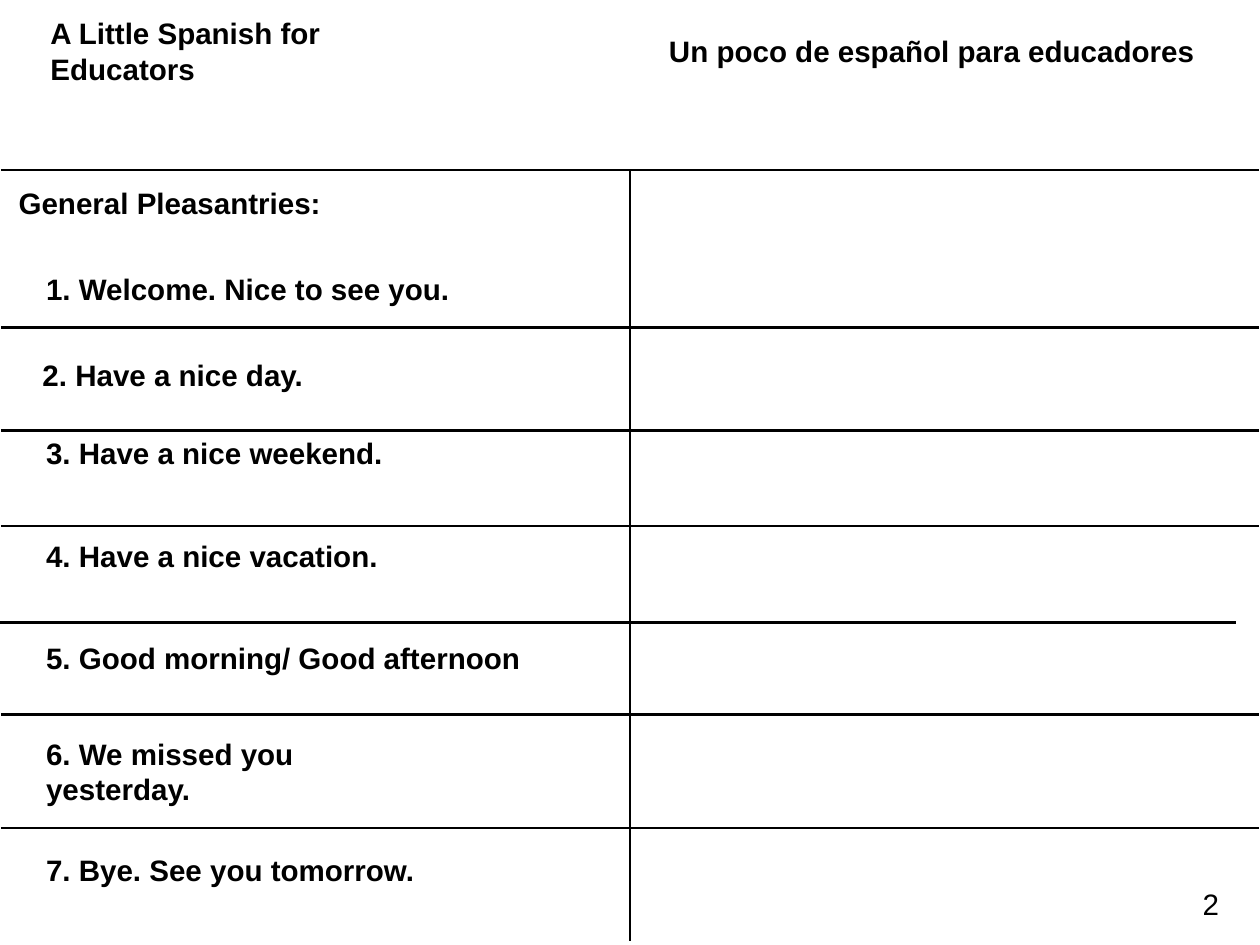
"""Build a two-column Spanish phrase sheet for educators."""
from dataclasses import dataclass

from lxml import etree
from pptx import Presentation
from pptx.dml.color import RGBColor
from pptx.enum.shapes import MSO_CONNECTOR
from pptx.enum.text import MSO_ANCHOR, MSO_AUTO_SIZE, PP_ALIGN
from pptx.oxml.ns import qn
from pptx.util import Inches, Pt

STRAIGHT = MSO_CONNECTOR.STRAIGHT
MIDDLE = MSO_ANCHOR.MIDDLE
FIXED_SIZE = MSO_AUTO_SIZE.NONE
LEFT, CENTER = PP_ALIGN.LEFT, PP_ALIGN.CENTER

TITLE = "A Little Spanish for Educators"
SUBTITLE = "Un poco de español para educadores"
SECTION = "General Pleasantries:"
PAGE_NUMBER = "2"

# Each row: top rule, phrase, phrase drop below the rule, phrase width, wraps.
ROWS = [
    (1.92, "1. Welcome. Nice to see you.", 1.09, 4.69, False),
    (3.70, "2. Have a nice day.", 0.28, 3.07, False),
    (4.86, "3. Have a nice weekend.", 0, 3.97, False),
    (5.94, "4. Have a nice vacation.", 0.08, 3.88, False),
    (7.03, "5. Good morning/ Good afternoon", 0.15, 5.5, False),
    (8.07, "6. We missed you yesterday.", 0.39, 4.59, True),
    (9.35, "7. Bye. See you tomorrow.", 0.22, 4.27, False),
]
SHORT_ROW, OUTDENTED_ROW = 4, 1

WIDTH, HEIGHT = 14.22, 10.67
HEADER_TOP, LINE_HEIGHT = 0.32, 0.5
PHRASE_LEFT, OUTDENT = 0.46, 0.04
RULE_LEFT, RULE_RIGHT, SHORT_RIGHT = 0.01, 14.21, 13.95
DIVIDER_BOTTOM = 10.62
INSET, WRAP_INSET = 0.06, 1.25


@dataclass(frozen=True)
class Theme:
    font: str = "Arial"
    size: Pt = Pt(24)
    rule: Pt = Pt(2)
    ink: RGBColor = RGBColor(0, 0, 0)


THEME = Theme()


def format_text(box, text, bold=True, wraps=False, align=LEFT):
    frame = box.text_frame
    frame.text = text
    frame.auto_size = FIXED_SIZE
    frame.word_wrap = wraps
    frame.vertical_anchor = MIDDLE
    frame.margin_left = frame.margin_top = frame.margin_bottom = Inches(INSET)
    frame.margin_right = Inches(WRAP_INSET if wraps else INSET)
    para = frame.paragraphs[0]
    para.alignment = align
    para.font.name, para.font.size = THEME.font, THEME.size
    para.font.bold, para.font.color.rgb = bold, THEME.ink


def add_text(page, text, left, top, width, **style):
    box = page.shapes.add_textbox(*map(Inches, (left, top, width, LINE_HEIGHT)))
    format_text(box, text, **style)


def add_rule(page, *ends):
    rule = page.shapes.add_connector(STRAIGHT, *map(Inches, ends))
    rule.line.color.rgb, rule.line.width = THEME.ink, THEME.rule
    etree.SubElement(rule._element.spPr, qn("a:effectLst"))


def main():
    deck = Presentation()
    deck.slide_width, deck.slide_height = Inches(WIDTH), Inches(HEIGHT)
    page = deck.slides.add_slide(deck.slide_layouts[5])

    title = page.shapes.title
    title.left, title.top = Inches(0.51), Inches(HEADER_TOP)
    title.width, title.height = Inches(4.87), Inches(LINE_HEIGHT)
    format_text(title, TITLE, wraps=True)
    add_text(page, SUBTITLE, 7.49, HEADER_TOP, 6.08)
    add_text(page, SECTION, 0.15, 2.04, 3.61)

    add_rule(page, WIDTH / 2, ROWS[0][0], WIDTH / 2, DIVIDER_BOTTOM)
    for index, (top, phrase, drop, width, wraps) in enumerate(ROWS):
        short = index == SHORT_ROW
        add_rule(page, 0 if short else RULE_LEFT, top,
                 SHORT_RIGHT if short else RULE_RIGHT, top)
        left = PHRASE_LEFT - (OUTDENT if index == OUTDENTED_ROW else 0)
        add_text(page, phrase, left, top + drop, width, wraps=wraps)

    add_text(page, PAGE_NUMBER, 13.51, 9.95, 0.31, bold=False, align=CENTER)
    deck.save("out.pptx")


if __name__ == "__main__":
    main()
